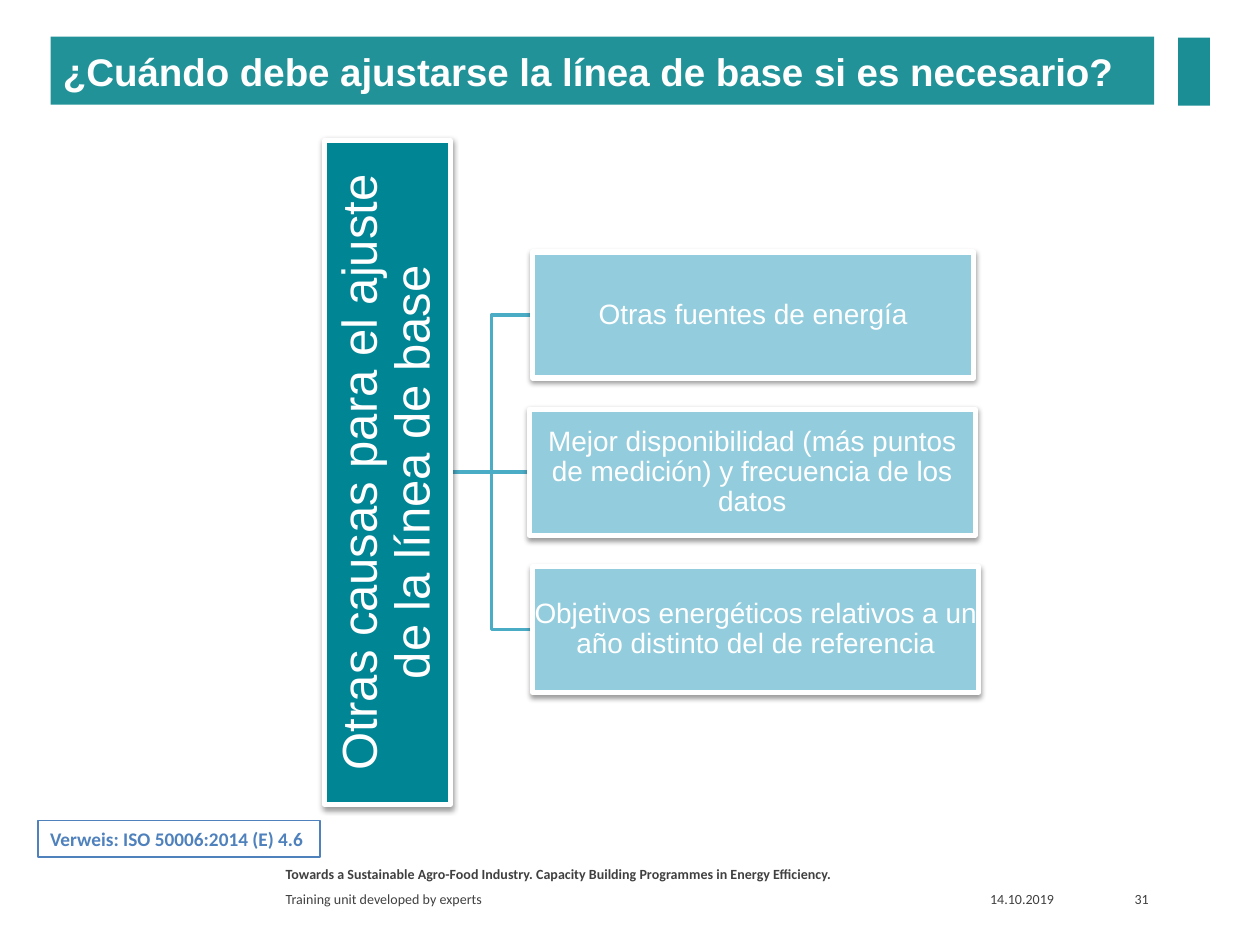
import pptx
import pptx.util
import pptx.dml.color
import pptx.enum.shapes
import pptx.enum.text
import pptx.oxml
import pptx.oxml.ns

Cm = pptx.util.Cm
Pt = pptx.util.Pt
RGBColor = pptx.dml.color.RGBColor
Anchor = pptx.enum.text.MSO_ANCHOR
Align = pptx.enum.text.PP_ALIGN
Connector = pptx.enum.shapes.MSO_CONNECTOR

WHITE = RGBColor(0xFF, 0xFF, 0xFF)
GREY = RGBColor(0x40, 0x40, 0x40)
BLUE = RGBColor(0x4F, 0x81, 0xBD)
ACCENT = RGBColor(0x1B, 0x8E, 0x95)
TITLE_FILL = RGBColor(0x20, 0x92, 0x98)
ROOT_FILL = RGBColor(0x00, 0x85, 0x95)
BRANCH_FILL = RGBColor(0x93, 0xCD, 0xDD)
LINK = RGBColor(0x4B, 0xAC, 0xC6)

TITLE = "¿Cuándo debe ajustarse la línea de base si es necesario?"
REFERENCE = "Verweis: ISO 50006:2014 (E) 4.6"
ROOT = "Otras causas para el ajuste de la línea de base"
BRANCHES = [
    ("Otras fuentes de energía", 10.74, 8.89),
    ("Mejor disponibilidad (más puntos de medición) y frecuencia de los datos", 10.67, 8.99),
    ("Objetivos energéticos relativos a un año distinto del de referencia", 10.74, 8.99),
]
FOOTERS = [
    ("Towards a Sustainable Agro-Food Industry. Capacity Building Programmes in Energy Efficiency.",
     (5.51, 17.32, 13.97, 0.53), True, Anchor.TOP, Align.LEFT, 0.25),
    ("14.10.2019", (19.71, 17.86, 2.11, 0.51), False, Anchor.MIDDLE, Align.LEFT, 0.25),
    ("Training unit developed by experts", (5.51, 17.88, 13.97, 0.48), False, Anchor.MIDDLE, Align.LEFT, 0.25),
    ("31", (21.84, 17.86, 1.42, 0.51), False, Anchor.MIDDLE, Align.RIGHT, 0.1),
]

NODE_HEIGHT = 2.54
BRANCH_TOP = 5.08
BRANCH_STEP = 3.17
ROOT_LENGTH = 13.39
ROOT_CENTER = 7.81
MIDDLE = BRANCH_TOP + BRANCH_STEP + NODE_HEIGHT / 2

SHADOW = (
    f'<a:effectLst {pptx.oxml.ns.nsdecls("a")}>'
    '<a:outerShdw blurRad="40000" dist="20000" dir="5400000" rotWithShape="0">'
    '<a:srgbClr val="000000"><a:alpha val="38000"/></a:srgbClr>'
    '</a:outerShdw></a:effectLst>'
)
NO_EFFECT = f'<a:effectLst {pptx.oxml.ns.nsdecls("a")}/>'


def write(shape, text, size, color, font="Arial", bold=False, anchor=Anchor.MIDDLE,
          align=Align.LEFT, wrap=True, insets=(0.25, 0.13, 0.25, 0.13)):
    frame = shape.text_frame
    frame.word_wrap = wrap
    frame.vertical_anchor = anchor
    frame.margin_left, frame.margin_top, frame.margin_right, frame.margin_bottom = map(Cm, insets)
    para = frame.paragraphs[0]
    para.text = text
    para.alignment = align
    span = para.runs[0]
    span.font.name = font
    span.font.size = Pt(size)
    span.font.bold = bold
    span.font.color.rgb = color
    return para


def add_box(page, place, fill, line=None, width=1):
    box = page.shapes.add_shape(pptx.enum.shapes.MSO_SHAPE.RECTANGLE, *map(Cm, place))
    box.shadow.inherit = False
    box.fill.solid()
    box.fill.fore_color.rgb = fill
    if line is None:
        box.line.fill.background()
    else:
        box.line.color.rgb = line
        box.line.width = Pt(width)
    return box


def add_node(page, place, fill, text, size, inset):
    node = add_box(page, place, fill, WHITE, 3)
    properties = node._element.spPr
    properties.remove(properties.find(pptx.oxml.ns.qn("a:effectLst")))
    properties.append(pptx.oxml.parse_xml(SHADOW))
    para = write(node, text, size, WHITE, align=Align.CENTER, insets=[inset] * 4)
    para.line_spacing = 0.9
    return node


def add_link(page, kind, start, end):
    link = page.shapes.add_connector(kind, *map(Cm, start + end))
    link.line.color.rgb = LINK
    link.line.width = Pt(2)
    link._element.spPr.append(pptx.oxml.parse_xml(NO_EFFECT))


def main():
    deck = pptx.Presentation()
    deck.slide_width, deck.slide_height = Cm(25.4), Cm(19.05)
    page = deck.slides.add_slide(deck.slide_layouts[6])

    for text, place, bold, anchor, align, right in FOOTERS:
        box = page.shapes.add_textbox(*map(Cm, place))
        write(box, text, 8, GREY, "Calibri", bold, anchor, align, insets=(0.25, 0.13, right, 0.13))

    reference = add_box(page, (0.76, 16.54, 5.69, 0.74), WHITE, BLUE)
    write(reference, REFERENCE, 11, BLUE, "Calibri", True, Anchor.TOP, wrap=False)
    add_box(page, (23.75, 0.76, 0.64, 1.37), ACCENT)
    title = add_box(page, (1.02, 0.74, 22.25, 1.37), TITLE_FILL)
    write(title, TITLE, 22, WHITE, bold=True)

    tops = [BRANCH_TOP + index * BRANCH_STEP for index in range(len(BRANCHES))]
    start = (ROOT_CENTER + NODE_HEIGHT / 2, MIDDLE)
    for (text, left, width), top in zip(BRANCHES, tops):
        center = top + NODE_HEIGHT / 2
        kind = Connector.STRAIGHT if center == MIDDLE else Connector.ELBOW
        add_link(page, kind, start, (left, center))

    root_place = (ROOT_CENTER - ROOT_LENGTH / 2, MIDDLE - NODE_HEIGHT / 2, ROOT_LENGTH, NODE_HEIGHT)
    root = add_node(page, root_place, ROOT_FILL, ROOT, 28, 0.05)
    root.rotation = 270
    for (text, left, width), top in zip(BRANCHES, tops):
        add_node(page, (left, top, width, NODE_HEIGHT), BRANCH_FILL, text, 16, 0.03)

    deck.save("out.pptx")


if __name__ == "__main__":
    main()
